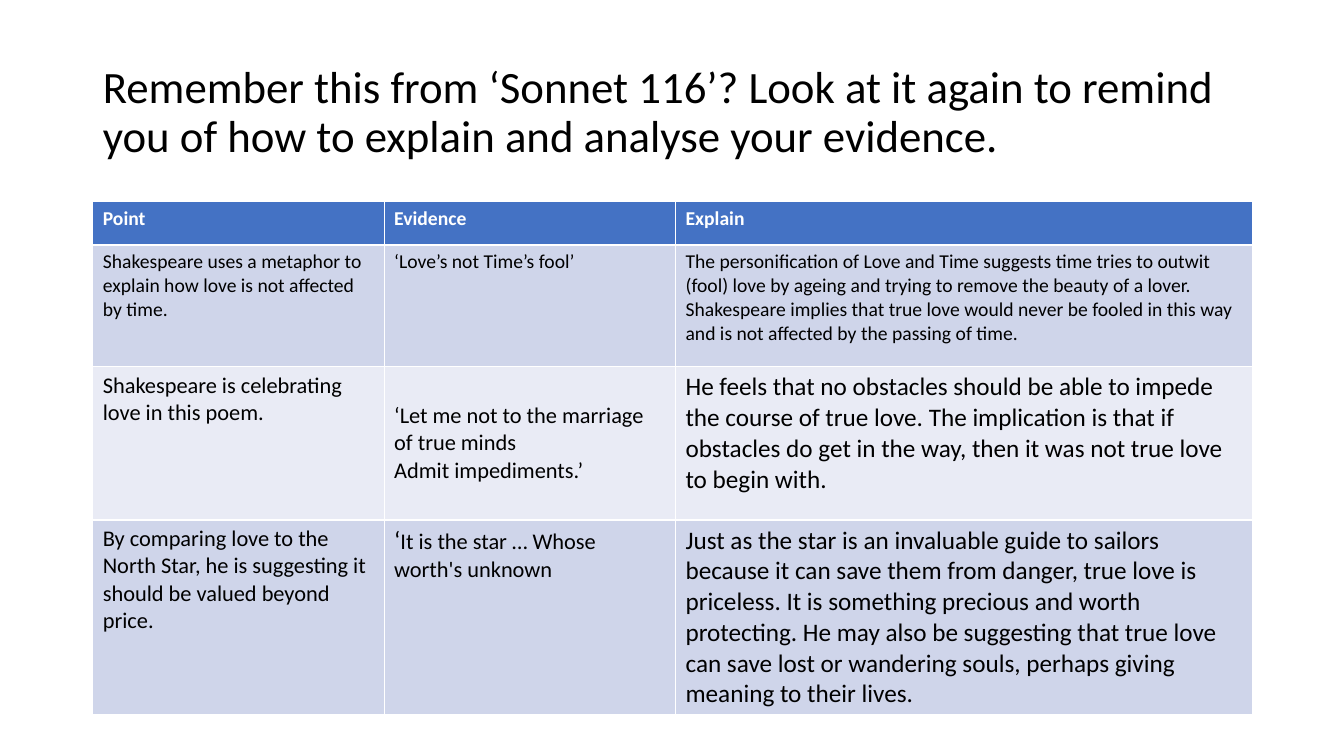
from pptx import Presentation
from pptx.dml.color import RGBColor
from pptx.enum.text import MSO_ANCHOR, MSO_AUTO_SIZE, PP_ALIGN
from pptx.util import Inches, Pt

FONT = "Calibri"
COLORS = {"header": "4472C4", "dark_band": "CFD5EA", "light_band": "E9EBF5",
          "white": "FFFFFF", "black": "000000"}

TITLE = ("Remember this from ‘Sonnet 116’? Look at it again to remind you "
         "of how to explain and analyse your evidence.")

# Each cell is a list of (text, size) runs; a newline is a line break
ROWS = [
    [[("Point", 14)], [("Evidence", 14)], [("Explain", 14)]],
    [[("Shakespeare uses a metaphor to explain how love is not affected by time.", 14)],
     [("‘Love’s not Time’s fool’", 14)],
     [("The personification of Love and Time suggests time tries to outwit (fool) love "
       "by ageing and trying to remove the beauty of a lover. Shakespeare implies that "
       "true love would never be fooled in this way and is not affected by the passing "
       "of time.", 14)]],
    [[("Shakespeare is celebrating love in this poem.", 16)],
     [("‘Let me not to the marriage of true minds\nAdmit impediments.’", 16)],
     [("He feels that no obstacles should be able to impede the course of true love. "
       "The implication is that if obstacles do get in the way, then it was not true "
       "love to begin with.", 18)]],
    [[("By comparing love to the North Star, he is suggesting it should be valued "
       "beyond price.", 16)],
     [("‘", 18), ("It is the star … Whose worth's unknown", 16)],
     [("Just as the star is an invaluable guide to sailors because it can save them from "
       "danger, true love is priceless. It is something precious and worth protecting. "
       "He may also be suggesting that true love can save lost or wandering souls, "
       "perhaps giving meaning to their lives.", 18)]],
]
COLUMN_WIDTHS = [2.89, 2.89, 5.72]
ROW_HEIGHTS = [0.43, 1.21, 1.52, 1.69]
LOWERED_CELL = (2, 1)  # this quotation starts one line down
LEFT, WIDTH = 0.92, 11.5


def add_run(paragraph, text, size, color, bold=False):
    run = paragraph.add_run()
    run.text = text
    run.font.name = FONT
    run.font.size = Pt(size)
    run.font.bold = bold
    run.font.color.rgb = RGBColor.from_string(COLORS[color])


def fill_cell(cell, runs, row):
    band = "header" if row == 0 else "dark_band" if row % 2 else "light_band"
    cell.fill.solid()
    cell.fill.fore_color.rgb = RGBColor.from_string(COLORS[band])
    paragraph = cell.text_frame.paragraphs[0]
    for text, size in runs:
        for index, line in enumerate(text.split("\n")):
            if index:
                paragraph.add_line_break()
            add_run(paragraph, line, size, "black" if row else "white", row == 0)


presentation = Presentation()
presentation.slide_width = Inches(13.33)
presentation.slide_height = Inches(7.5)
slide = presentation.slides.add_slide(presentation.slide_layouts[5])

# Title
title = slide.shapes.title
title.left, title.top = Inches(LEFT), Inches(0.4)
title.width, title.height = Inches(WIDTH), Inches(1.45)
title.text_frame.auto_size = MSO_AUTO_SIZE.NONE
title.text_frame.vertical_anchor = MSO_ANCHOR.MIDDLE
heading = title.text_frame.paragraphs[0]
heading.alignment = PP_ALIGN.LEFT
heading.line_spacing = 0.9
add_run(heading, TITLE, 32, "black")

# Table: the default style supplies the white cell borders
table = slide.shapes.add_table(
    len(ROWS), len(COLUMN_WIDTHS), Inches(LEFT), Inches(2),
    Inches(WIDTH), Inches(sum(ROW_HEIGHTS))).table
for column, width in zip(table.columns, COLUMN_WIDTHS):
    column.width = Inches(width)
for table_row, height in zip(table.rows, ROW_HEIGHTS):
    table_row.height = Inches(height)
for row, cells in enumerate(ROWS):
    for column, runs in enumerate(cells):
        fill_cell(table.cell(row, column), runs, row)
table.cell(*LOWERED_CELL).margin_top = Inches(0.35)

presentation.save("out.pptx")
